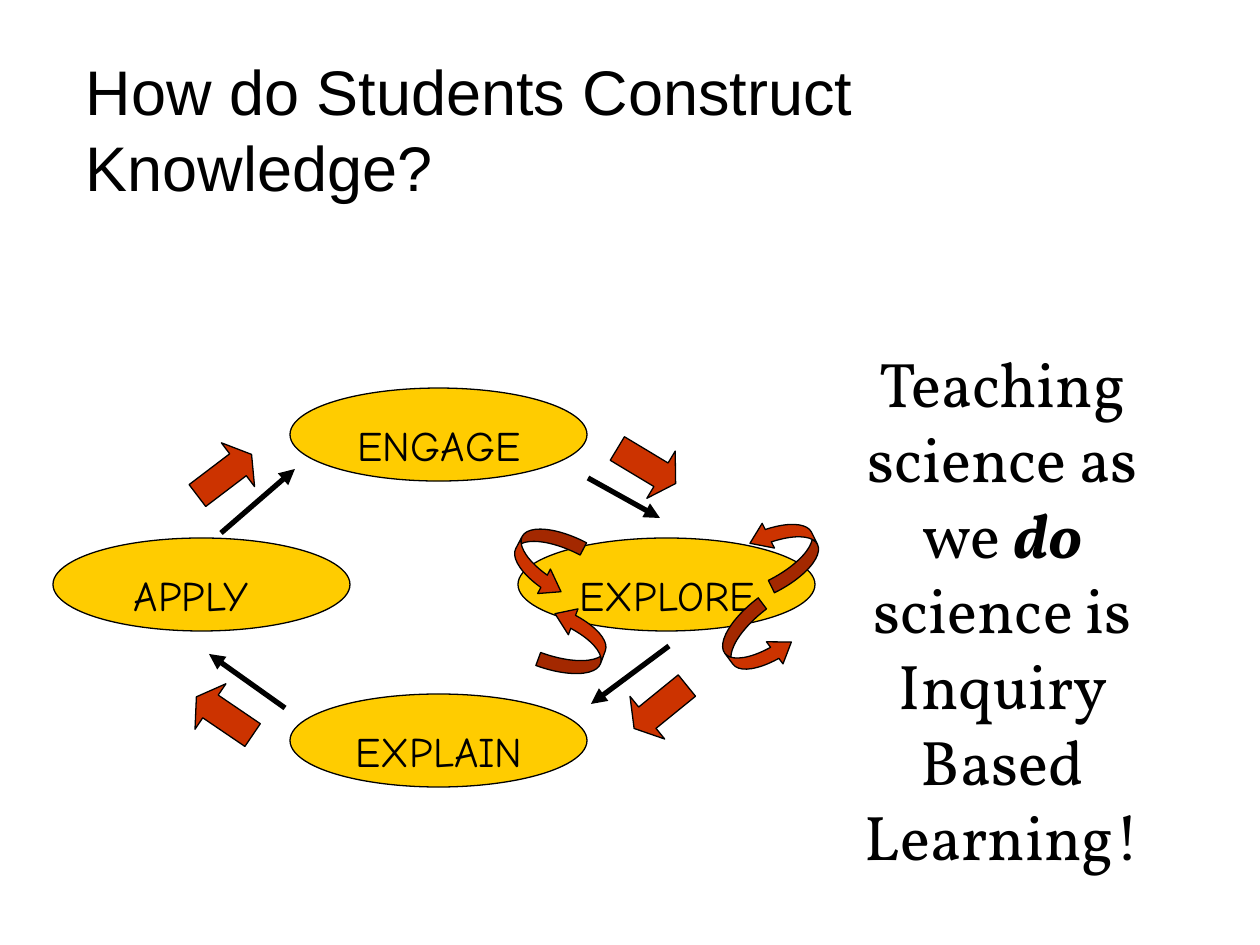
from typing import NamedTuple

from pptx import Presentation
from pptx.dml.color import RGBColor
from pptx.enum.shapes import MSO_CONNECTOR as Connector, MSO_SHAPE as Preset
from pptx.enum.text import MSO_ANCHOR as Anchor, PP_ALIGN as Align
from pptx.oxml.ns import qn
from pptx.util import Pt
from lxml.etree import SubElement

EMU_PER_PX = 914400 / 126
BLACK, GOLD, RED = "000000", "FFCC00", "CC3300"
STAGE_SIZE = (297, 93)
LABEL_SIZE = (218, 63)
LABEL_TOP = 25


class Stage(NamedTuple):
    name: str
    left: int
    top: int
    label_shift: int = 40


class Link(NamedTuple):
    start: tuple[int, int]
    end: tuple[int, int]


class Arrow(NamedTuple):
    left: int
    top: int
    rotation: float


class ArrowStyle(NamedTuple):
    preset: Preset
    width: int
    height: int
    adjustments: tuple[float, ...]


STAGES = [
    Stage("ENGAGE", 290, 388),
    Stage("APPLY", 53, 538, 29),
    Stage("EXPLAIN", 290, 694),
    Stage("EXPLORE", 518, 538),
]
LINKS = [
    Link((588, 478), (660, 518)),
    Link((669, 646), (591, 704)),
    Link((221, 533), (295, 469)),
    Link((285, 708), (209, 654)),
]
BLOCK_STYLE = ArrowStyle(Preset.DOWN_ARROW, 55, 68, (0.5, 0.31))
BLOCK_ARROWS = [
    Arrow(633, 673, 50.9),
    Arrow(197, 441, 232.8),
    Arrow(197, 682, 124.2),
    Arrow(619, 432, 301),
]
CURVED_STYLE = ArrowStyle(Preset.CURVED_RIGHT_ARROW, 60, 69, (0.23, 0.46, 0.33))
CURVED_ARROWS = [
    Arrow(756, 514, 153.6),
    Arrow(514, 525, 27.6),
    Arrow(546, 609, 200.3),
    Arrow(725, 609, 323.1),
]


def px(*lengths: int) -> list[int]:
    return [round(length * EMU_PER_PX) for length in lengths]


def color(value: str) -> RGBColor:
    return RGBColor.from_string(value)


def format_font(font, name: str, size: int) -> None:
    font.name = name
    font.size = Pt(size)
    font.color.rgb = color(BLACK)


def add_filled_shape(slide, preset: Preset, box: tuple[int, ...], fill: str):
    shape = slide.shapes.add_shape(preset, *px(*box))
    shape.shadow.inherit = False
    shape.fill.solid()
    shape.fill.fore_color.rgb = color(fill)
    shape.line.color.rgb = color(BLACK)
    shape.line.width = Pt(0.75)
    return shape


def add_centered_text(slide, box: tuple[int, ...]):
    text_frame = slide.shapes.add_textbox(*px(*box)).text_frame
    text_frame.word_wrap = True
    paragraph = text_frame.paragraphs[0]
    paragraph.alignment = Align.CENTER
    return paragraph


def add_stage_label(slide, stage: Stage) -> None:
    position = (stage.left + stage.label_shift, stage.top + LABEL_TOP)
    paragraph = add_centered_text(slide, position + LABEL_SIZE)
    paragraph.text = stage.name
    format_font(paragraph.runs[0].font, "Comic Neue", 24)


def add_link(slide, link: Link) -> None:
    connector = slide.shapes.add_connector(
        Connector.STRAIGHT, *px(*link.start, *link.end)
    )
    connector.line.color.rgb = color(BLACK)
    connector.line.width = Pt(3)
    properties = connector._element.spPr
    SubElement(properties.find(qn("a:ln")), qn("a:tailEnd"), type="triangle")
    SubElement(properties, qn("a:effectLst"))


def add_arrow(slide, arrow: Arrow, style: ArrowStyle) -> None:
    box = (arrow.left, arrow.top, style.width, style.height)
    shape = add_filled_shape(slide, style.preset, box, RED)
    for index, value in enumerate(style.adjustments):
        shape.adjustments[index] = value
    shape.rotation = arrow.rotation


def set_title(slide) -> None:
    title = slide.shapes.title
    title.left, title.top, title.width, title.height = px(73, 42, 1063, 168)
    text_frame = title.text_frame
    text_frame.text = "How do Students Construct \vKnowledge?"
    text_frame.vertical_anchor = Anchor.BOTTOM
    paragraph = text_frame.paragraphs[0]
    paragraph.alignment = Align.LEFT
    for run in paragraph.runs:
        format_font(run.font, "Arial", 36)


def add_message(slide) -> None:
    paragraph = add_centered_text(slide, (840, 338, 325, 543))
    for text, emphasized in (
        ("Teaching science as we ", False),
        ("do", True),
        (" science is Inquiry Based Learning!", False),
    ):
        run = paragraph.add_run()
        run.text = text
        format_font(run.font, "Vollkorn", 36)
        run.font.bold = run.font.italic = emphasized


def main() -> None:
    presentation = Presentation()
    presentation.slide_width, presentation.slide_height = px(1260, 945)
    slide = presentation.slides.add_slide(presentation.slide_layouts[5])
    set_title(slide)
    for stage in STAGES:
        add_filled_shape(
            slide, Preset.OVAL, (stage.left, stage.top) + STAGE_SIZE, GOLD
        )
    for stage in STAGES:
        add_stage_label(slide, stage)
    for link in LINKS:
        add_link(slide, link)
    for arrow in BLOCK_ARROWS:
        add_arrow(slide, arrow, BLOCK_STYLE)
    for arrow in CURVED_ARROWS:
        add_arrow(slide, arrow, CURVED_STYLE)
    add_message(slide)
    presentation.save("out.pptx")


if __name__ == "__main__":
    main()
